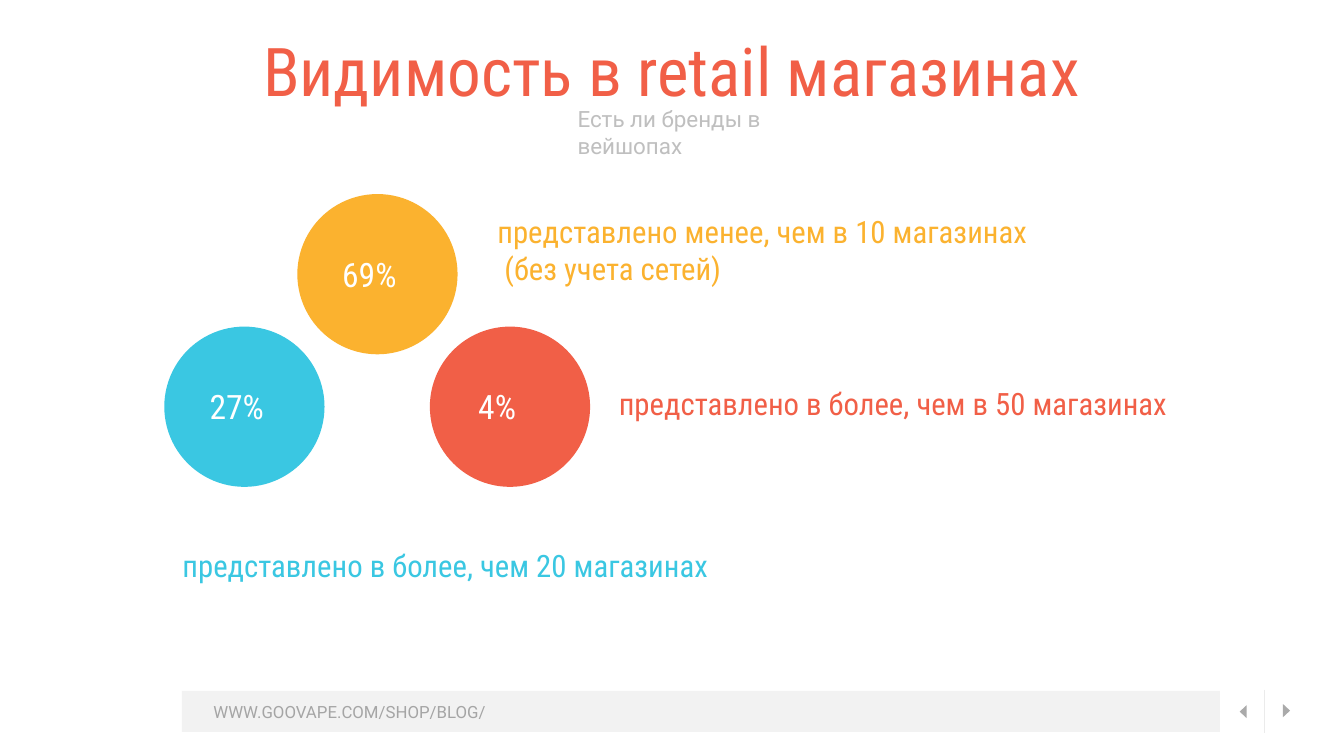
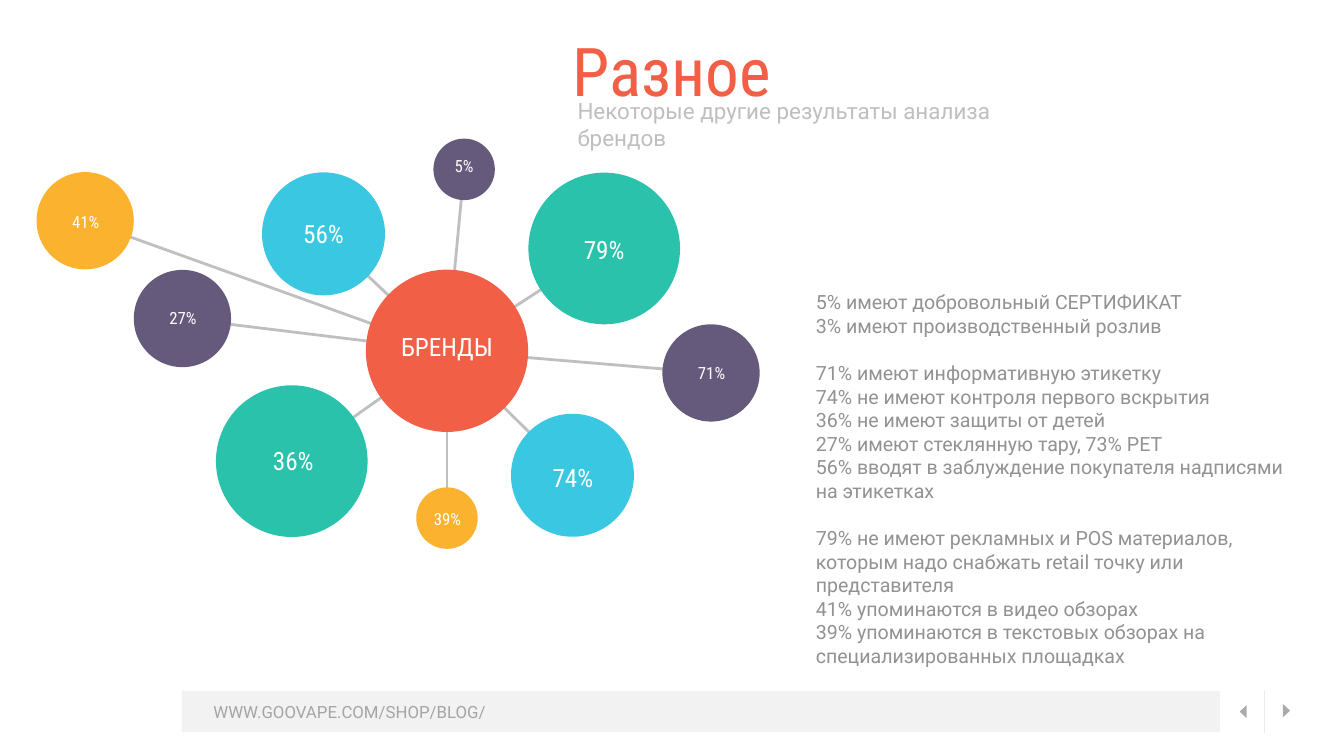
"""Builds two slides on how brands show up in retail shops."""
from lxml.etree import SubElement
from pptx import Presentation
from pptx.dml.color import RGBColor
from pptx.enum.shapes import MSO_CONNECTOR as Connector, MSO_SHAPE as Shape
from pptx.enum.text import MSO_ANCHOR as Anchor, PP_ALIGN as Align
from pptx.oxml.ns import qn
from pptx.util import Pt

SCALE = 9144
WIDTH, HEIGHT = 2667, 1500
INSET = 6

WHITE = RGBColor(0xFF, 0xFF, 0xFF)
RED = RGBColor(0xF1, 0x5F, 0x47)
BLUE = RGBColor(0x3A, 0xC7, 0xE2)
YELLOW = RGBColor(0xFB, 0xB2, 0x2F)
GREEN = RGBColor(0x2B, 0xC2, 0xAC)
PURPLE = RGBColor(0x65, 0x5A, 0x7C)
BAND = RGBColor(0xE6, 0xE6, 0xE6)
DIVIDER = RGBColor(0xEB, 0xEB, 0xEB)
ARROW = RGBColor(0xAA, 0xAA, 0xAA)
ADDRESS = RGBColor(0xA5, 0xA5, 0xA5)
SOFT = RGBColor(0xBF, 0xBF, 0xBF)
BODY = RGBColor(0x92, 0x92, 0x92)

PLAIN = "Roboto"
CONDENSED = "Roboto Condensed"


def px(length):
    return round(length * SCALE)


class Deck:
    """Holds the style and the slide being drawn."""

    def __init__(self):
        self.show = Presentation()
        self.show.slide_width, self.show.slide_height = px(WIDTH), px(HEIGHT)
        self.shapes = None

    def new_slide(self, title, title_box, subtitle, subtitle_box):
        self.shapes = self.show.slides.add_slide(self.show.slide_layouts[6]).shapes
        self.footer()
        self.text(title_box, [[title]], 96, RED, align=Align.CENTER,
                  anchor=Anchor.MIDDLE, inset=INSET)
        self.text(subtitle_box, [[subtitle]], 32, SOFT, PLAIN,
                  anchor=Anchor.MIDDLE, inset=INSET)

    def footer(self):
        band = self.shapes.add_shape(Shape.RECTANGLE, px(361), px(1371), px(2060), px(81))
        self.paint(band, BAND)
        color = band.fill._xPr.find(qn("a:solidFill"))[0]
        SubElement(color, qn("a:alpha")).set("val", "50000")
        self.text((295, 1387, 797, 52), [["WWW.GOOVAPE.COM/SHOP/BLOG/"]], 24, ADDRESS, PLAIN,
                  Align.CENTER, Anchor.MIDDLE, INSET)
        self.line((2509, 1369), (2509, 1454), DIVIDER, 2)
        self.arrow(2474, 2460, 1399)
        self.arrow(2546, 2560, 1397)

    def arrow(self, base, tip, top):
        builder = self.shapes.build_freeform(base, top, scale=SCALE)
        builder.add_line_segments([(tip, top + 13), (base, top + 26)])
        self.paint(builder.convert_to_shape(), ARROW)

    def paint(self, shape, color, outline=0):
        shape.shadow.inherit = False
        shape.fill.solid()
        shape.fill.fore_color.rgb = color
        if outline:
            shape.line.color.rgb = color
            shape.line.width = Pt(outline)
        else:
            shape.line.fill.background()

    def circle(self, center, diameter, color, outline=0):
        left, top = (middle - diameter / 2 for middle in center)
        disc = self.shapes.add_shape(Shape.OVAL, px(left), px(top), px(diameter), px(diameter))
        self.paint(disc, color, outline)

    def line(self, start, end, color, weight):
        rule = self.shapes.add_connector(Connector.STRAIGHT, *map(px, start + end))
        rule.line.color.rgb = color
        rule.line.width = Pt(weight)
        SubElement(rule._element.spPr, qn("a:effectLst"))

    def text(self, box, groups, size, color, font=CONDENSED, align=Align.LEFT,
             anchor=Anchor.TOP, inset=0, gap=0):
        frame = self.shapes.add_textbox(*map(px, box)).text_frame
        frame.word_wrap = True
        frame.vertical_anchor = anchor
        frame.margin_left = frame.margin_right = px(inset)
        frame.margin_top = frame.margin_bottom = px(inset)
        paragraph = frame.paragraphs[0]
        for group_index, group in enumerate(groups):
            for line_index, words in enumerate(group):
                if group_index or line_index:
                    paragraph = frame.add_paragraph()
                if group_index and not line_index:
                    paragraph.space_before = Pt(gap)
                paragraph.text = words
                paragraph.alignment = align
                paragraph.font.name = font
                paragraph.font.size = Pt(size)
                paragraph.font.color.rgb = color

    def label(self, center, width, words, size):
        height = 61 if size > 24 else 40
        x, y = center
        self.text((x - width // 2, y - height // 2, width, height), [[words]],
                  size, WHITE, align=Align.CENTER)


def visibility(deck):
    deck.new_slide("Видимость в retail магазинах", (387, 52, 1892, 173),
                   "Есть ли бренды в вейшопах", (1140, 229, 552, 65))
    shares = [
        ("4%", (1012, 807), RED, (949, 765, 100, 81),
         "представлено в более, чем в 50 магазинах", (1228, 763, 1236, 74)),
        ("27%", (485, 807), BLUE, (416, 765, 139, 81),
         "представлено в более, чем 20 магазинах", (362, 1085, 1186, 74)),
        ("69%", (749, 544), YELLOW, (679, 504, 139, 81),
         "представлено менее, чем в 10 магазинах\v (без учета сетей)", (987, 423, 1236, 148)),
    ]
    for share, center, color, share_box, meaning, meaning_box in shares:
        deck.circle(center, 318, color)
        deck.text(share_box, [[share]], 48, WHITE)
        deck.text(meaning_box, [[meaning]], 44, color)


def miscellany(deck):
    deck.new_slide("Разное", (1094, 52, 478, 173),
                   "Некоторые другие результаты анализа брендов", (1140, 213, 939, 65))
    hub = (887, 696)
    satellites = [
        ("41%", (169, 438), 193, YELLOW, 24, (170, 440)),
        ("56%", (642, 464), 244, BLUE, 36, (642, 464)),
        ("79%", (1199, 493), 301, GREEN, 36, (1199, 494)),
        ("71%", (1411, 740), 193, PURPLE, 24, (1412, 739)),
        ("5%", (921, 336), 122, PURPLE, 24, (921, 329)),
        ("74%", (1136, 943), 244, BLUE, 36, (1137, 947)),
        ("39%", (887, 1028), 122, YELLOW, 24, (888, 1030)),
        ("36%", (579, 915), 301, GREEN, 36, (582, 914)),
        ("27%", (362, 632), 193, PURPLE, 24, (363, 631)),
    ]
    for _, center, *_ in satellites:
        deck.line(hub, center, SOFT, 4)
    deck.circle(hub, 311, RED, outline=8)
    deck.label((887, 687), 266, "БРЕНДЫ", 36)
    for share, center, diameter, color, size, label_center in satellites:
        deck.circle(center, diameter, color)
        deck.label(label_center, 208, share, size)

    findings = [
        ["5% имеют добровольный СЕРТИФИКАТ",
         "3% имеют производственный розлив"],
        ["71% имеют информативную этикетку",
         "74% не имеют контроля первого вскрытия",
         "36% не имеют защиты от детей",
         "27% имеют стеклянную тару, 73% PET",
         "56% вводят в заблуждение покупателя надписями на этикетках"],
        ["79% не имеют рекламных и POS материалов, которым надо снабжать retail точку "
         "или представителя",
         "41% упоминаются в видео обзорах",
         "39% упоминаются в текстовых обзорах на специализированных площадках"],
    ]
    deck.text((1613, 567, 987, 765), findings, 28, BODY, PLAIN,
              anchor=Anchor.MIDDLE, inset=INSET, gap=34)


def main():
    deck = Deck()
    visibility(deck)
    miscellany(deck)
    deck.show.save("out.pptx")


if __name__ == "__main__":
    main()
